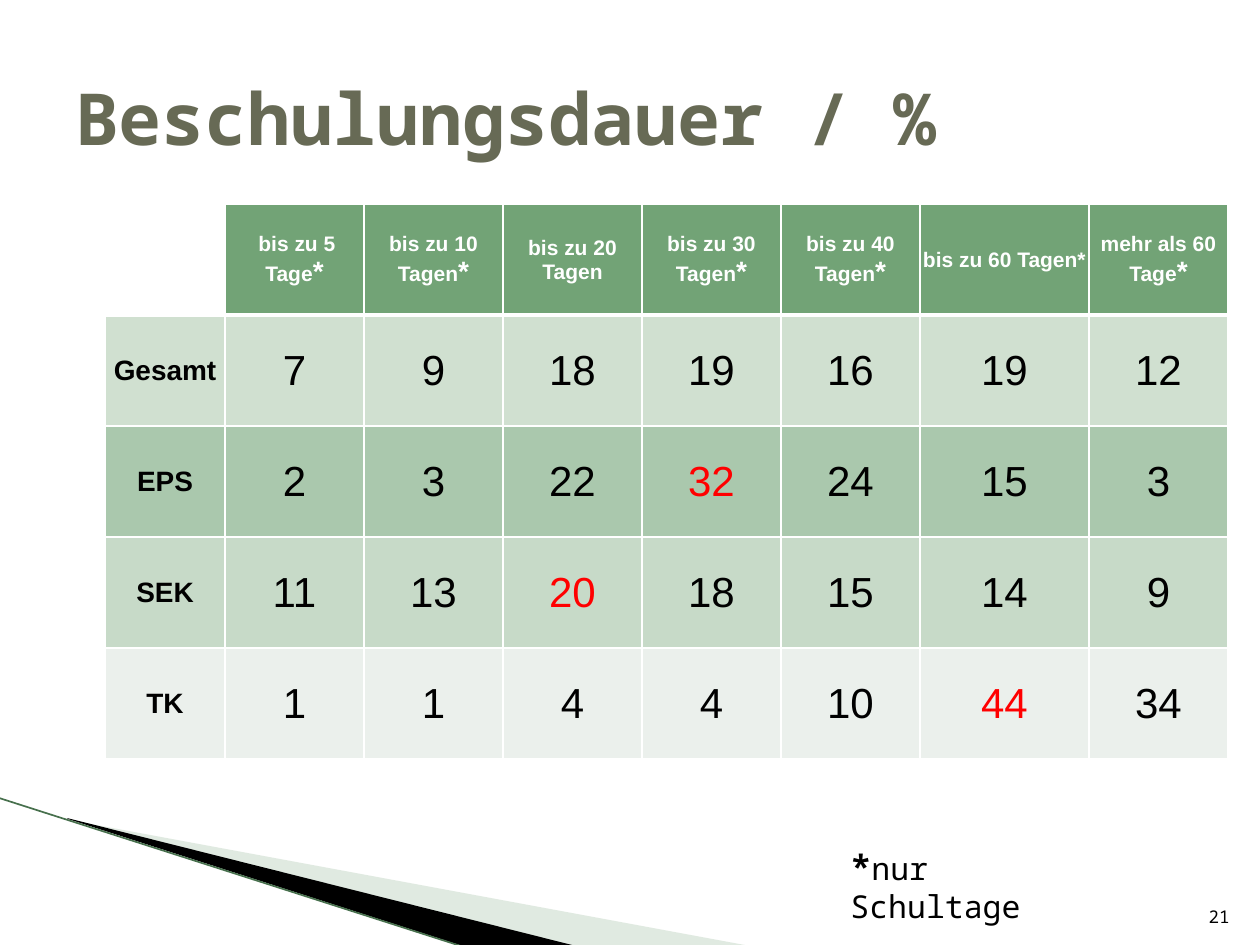
from lxml import etree
from pptx import Presentation
from pptx.dml.color import RGBColor
from pptx.enum.shapes import MSO_CONNECTOR
from pptx.enum.text import MSO_ANCHOR, PP_ALIGN
from pptx.oxml.ns import qn
from pptx.util import Pt

SCALE = 914400 / 126
TOP, MIDDLE, BOTTOM = MSO_ANCHOR.TOP, MSO_ANCHOR.MIDDLE, MSO_ANCHOR.BOTTOM
LEFT, CENTER, RIGHT = PP_ALIGN.LEFT, PP_ALIGN.CENTER, PP_ALIGN.RIGHT
STRAIGHT = MSO_CONNECTOR.STRAIGHT
MONO, SANS = "Noto Sans Mono", "Arial"
COLORS = {
    "title": "676A55", "text": "000000", "white": "FFFFFF", "highlight": "FF0000",
    "header": "72A376", "Gesamt": "D0E0D0", "EPS": "AAC8AD", "SEK": "C7DAC8",
    "TK": "EBF0EC", "pale_wedge": "B3CBB5", "dark_wedge": "000000", "edge": "47704D",
}

COLUMN_WIDTHS = [120] + [139] * 5 + [169, 139]
HEADERS = [
    [(" ", 10), ("bis zu 5 Tage", 12), ("*", 16)],
    [("bis zu 10 Tagen", 12), ("*", 16)],
    [("bis zu 20 Tagen", 12)],
    [("bis zu 30 Tagen", 12), ("*", 16)],
    [("bis zu 40 Tagen", 12), ("*", 16)],
    [("bis zu 60 Tagen*", 12)],
    [("mehr als 60 Tage", 12), ("*", 16)],
]
SHARES = {
    "Gesamt": [7, 9, 18, 19, 16, 19, 12],
    "EPS": [2, 3, 22, 32, 24, 15, 3],
    "SEK": [11, 13, 20, 18, 15, 14, 9],
    "TK": [1, 1, 4, 4, 10, 44, 34],
}
HIGHLIGHTS = {("EPS", 32), ("SEK", 20), ("TK", 44)}


def px(n):
    return round(n * SCALE)


def rgb(name):
    return RGBColor.from_string(COLORS[name])


def add_run(p, text, size, color="text", bold=False, font=MONO):
    r = p.add_run()
    r.text = text
    r.font.size, r.font.bold, r.font.name = Pt(size), bold, font
    r.font.color.rgb = rgb(color)


def add_text(s, box, runs, anchor=TOP, align=LEFT):
    """Each run is a tuple of the arguments add_run takes after the paragraph."""
    tf = s.shapes.add_textbox(*map(px, box)).text_frame
    tf.word_wrap = True
    tf.vertical_anchor = anchor
    p = tf.paragraphs[0]
    p.alignment = align
    for run in runs:
        add_run(p, *run)


def add_wedge(s, points, color, opacity=100):
    builder = s.shapes.build_freeform(*points[0], scale=SCALE)
    builder.add_line_segments(points[1:], close=True)
    sp = builder.convert_to_shape()
    sp.shadow.inherit = False
    sp.line.fill.background()
    sp.fill.solid()
    sp.fill.fore_color.rgb = rgb(color)
    if opacity < 100:
        clr = sp.fill._xPr.find(qn("a:solidFill"))[0]
        etree.SubElement(clr, qn("a:alpha"), val=str(opacity * 1000))


def add_corner(s, box):
    x, y, w, h = box
    bottom = y + h
    add_wedge(s, [(x + 70, y + 22), (x + w, bottom - 2), (x + 576, bottom - 2),
                  (x + 70, y + 21)], "pale_wedge", 40)
    add_wedge(s, [(x + 68, y + 20), (x + 577, bottom - 2), (x + 470, bottom),
                  (x + 69, y + 21)], "dark_wedge")
    edge = s.shapes.add_connector(STRAIGHT, px(x), px(y), px(x + 468), px(bottom))
    edge.line.color.rgb = rgb("edge")
    edge.line.width = Pt(0.95)
    etree.SubElement(edge._element.spPr, qn("a:effectLst"))


def set_borders(cell, bottom_width):
    tcPr = cell._tc.get_or_add_tcPr()
    for side, width in (("L", 1), ("R", 1), ("T", 1), ("B", bottom_width)):
        ln = etree.SubElement(tcPr, qn(f"a:ln{side}"), w=str(Pt(width)))
        fill = etree.SubElement(ln, qn("a:solidFill"))
        etree.SubElement(fill, qn("a:srgbClr"), val=COLORS["white"])


def fill_cell(cell, runs, fill, bottom_width=1):
    set_borders(cell, bottom_width)
    cell.fill.solid()
    cell.fill.fore_color.rgb = rgb(fill)
    cell.vertical_anchor = MIDDLE
    cell.margin_left = cell.margin_right = cell.margin_top = px(1)
    cell.margin_bottom = 0
    p = cell.text_frame.paragraphs[0]
    p.alignment = CENTER
    for text, size, color, bold in runs:
        add_run(p, text, size, color, bold, SANS)


def add_duration_table(s, box):
    rows = len(SHARES) + 1
    table = s.shapes.add_table(rows, len(COLUMN_WIDTHS), *map(px, box)).table
    for column, width in zip(table.columns, COLUMN_WIDTHS):
        column.width = px(width)
    for row in table.rows:
        row.height = px(box[3] / rows)
    corner = table.cell(0, 0)
    set_borders(corner, 3)
    corner.fill.background()
    for c, header in enumerate(HEADERS, 1):
        runs = [(text, size, "white", True) for text, size in header]
        fill_cell(table.cell(0, c), runs, "header", 3)
    for r, (group, values) in enumerate(SHARES.items(), 1):
        fill_cell(table.cell(r, 0), [(group, 16, "text", True)], group)
        for c, value in enumerate(values, 1):
            color = "highlight" if (group, value) in HIGHLIGHTS else "text"
            fill_cell(table.cell(r, c), [(str(value), 24, color, False)], group)


def main():
    prs = Presentation()
    prs.slide_width, prs.slide_height = px(1260), px(945)
    s = prs.slides.add_slide(prs.slide_layouts[6])
    add_corner(s, (-1, 798, 751, 150))
    add_text(s, (63, 38, 1134, 158), [("Beschulungsdauer / %", 41, "title", True)], MIDDLE)
    add_duration_table(s, (105, 204, sum(COLUMN_WIDTHS), 555))
    add_text(s, (1192, 883, 50, 50), [("21", 10)], BOTTOM, RIGHT)
    add_text(s, (838, 839, 246, 55), [("*", 20, "text", True), ("nur Schultage", 18)])
    prs.save("out.pptx")


if __name__ == "__main__":
    main()
